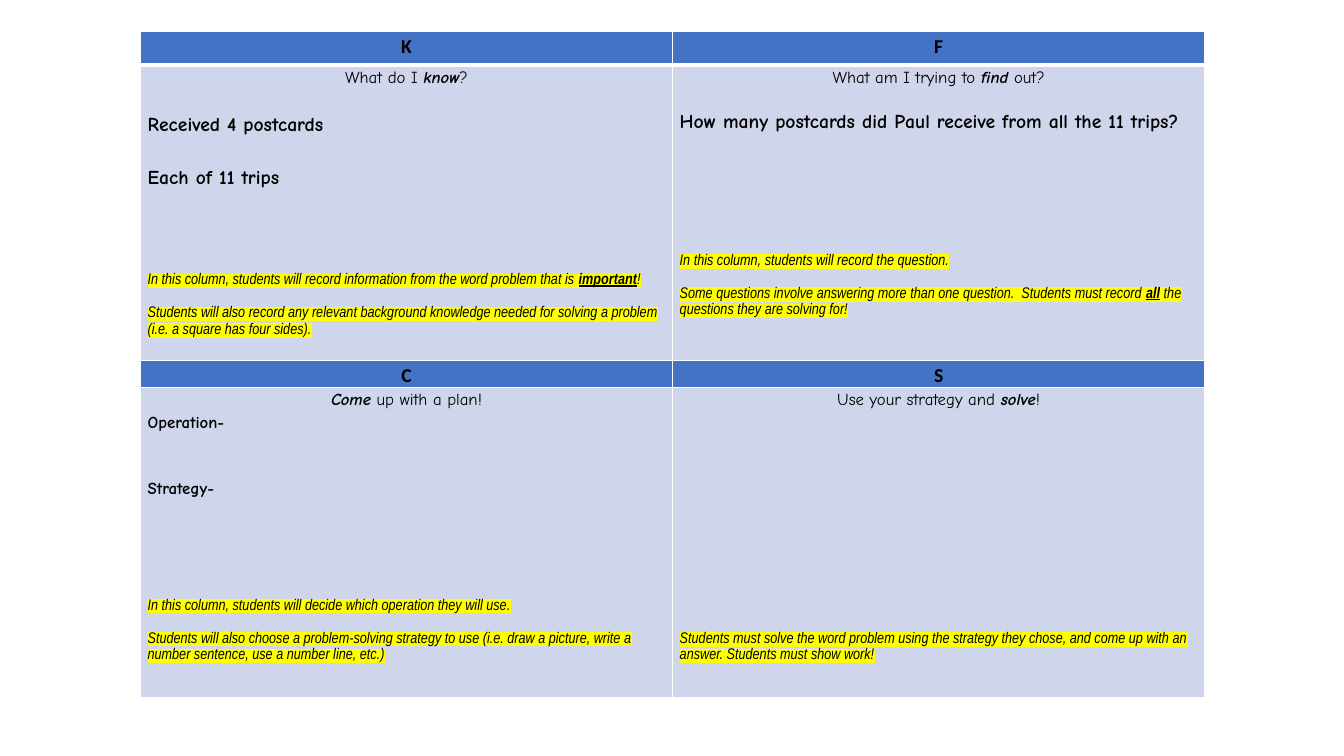
from lxml import etree
from pptx import Presentation
from pptx.dml.color import RGBColor
from pptx.enum.text import PP_ALIGN
from pptx.oxml.ns import qn
from pptx.util import Cm, Pt

CENTER, LEFT = PP_ALIGN.CENTER, PP_ALIGN.LEFT
COLORS = {"header": "4472C4", "body": "CFD5EA", "text": "000000",
          "border": "FFFFFF", "marker": "FFFF00"}

STYLES = {
    "letter": {"font": "Calibri", "size": 14, "bold": True, "align": CENTER},
    "prompt": {"font": "Comic Neue", "size": 12, "align": CENTER},
    "answer": {"font": "Comic Neue", "size": 14, "bold": True},
    "label": {"font": "Comic Neue", "size": 12, "bold": True},
    "note": {"font": "Arial Narrow", "size": 11, "italic": True},
}
NOTE_GAP = 11.8

# Each entry: style, space before in points, line spacing, text with *emphasis*
KNOW = [
    ("prompt", 0, 1.15, "What do I *know*?"),
    ("answer", 19, 1, "Received 4 postcards"),
    ("answer", 21.7, 1, "Each of 11 trips"),
    ("note", 58.5, 1.15, "In this column, students will record information from "
     "the word problem that is *important*!"),
    ("note", NOTE_GAP, 1.15, "Students will also record any relevant background "
     "knowledge needed for solving a problem (i.e. a square has four sides)."),
]
FIND = [
    ("prompt", 0, 1.15, "What am I trying to *find* out?"),
    ("answer", 14.5, 1.15, "How many postcards did Paul receive from all the 11 trips?"),
    ("note", 84.5, 1.15, "In this column, students will record the question."),
    ("note", NOTE_GAP, 1.15, "Some questions involve answering more than one question.  "
     "Students must record *all* the questions they are solving for!"),
]
COME = [
    ("prompt", 0, 1.15, "*Come* up with a plan!"),
    ("label", 0, 1.15, "Operation-"),
    ("label", 31.6, 1.15, "Strategy-"),
    ("note", 70, 1.15, "In this column, students will decide which operation they will use."),
    ("note", NOTE_GAP, 1.15, "Students will also choose a problem-solving strategy to use "
     "(i.e. draw a picture, write a number sentence, use a number line, etc.)"),
]
SOLVE = [
    ("prompt", 0, 1.15, "Use your strategy and *solve*!"),
    ("note", 157, 1.15, "Students must solve the word problem using the strategy they "
     "chose, and come up with an answer. Students must show work!"),
]


def letter(text):
    return [("letter", 0, 1.15, text)]


GRID = [[letter("K"), letter("F")], [KNOW, FIND], [letter("C"), letter("S")], [COME, SOLVE]]
ROW_HEIGHTS = [0.84, 7.44, 0.69, 7.8]


def add_color(parent, tag, color):
    holder = etree.SubElement(parent, qn(tag))
    etree.SubElement(holder, qn("a:srgbClr"), val=COLORS[color])
    return holder


def highlight(run):
    properties = run._r.get_or_add_rPr()
    add_color(properties, "a:highlight", "marker")


def set_borders(cell, widths):
    properties = cell._tc.get_or_add_tcPr()
    for position, (side, width) in enumerate(widths.items()):
        line = etree.Element(qn(f"a:ln{side}"), w=str(Pt(width)))
        add_color(line, "a:solidFill", "border")
        properties.insert(position, line)


def write_paragraph(paragraph, style_name, gap, spacing, text):
    style = STYLES[style_name]
    is_note = style_name == "note"
    paragraph.alignment = style.get("align", LEFT)
    paragraph.line_spacing = spacing
    if gap:
        paragraph.space_before = Pt(gap)
    paragraph.font.name = style["font"]
    paragraph.font.size = Pt(style["size"])
    paragraph.font.bold = style.get("bold", False)
    paragraph.font.italic = style.get("italic", False)
    paragraph.font.color.rgb = RGBColor.from_string(COLORS["text"])
    for index, piece in enumerate(text.split("*")):
        if not piece:
            continue
        run = paragraph.add_run()
        run.text = piece
        if index % 2:
            run.font.bold = True
            if is_note:
                run.font.underline = True
            else:
                run.font.italic = True
        if is_note:
            highlight(run)


def fill_cell(cell, entries, color):
    cell.margin_left = cell.margin_right = Cm(0.18)
    cell.margin_top = cell.margin_bottom = 0
    cell.fill.solid()
    cell.fill.fore_color.rgb = RGBColor.from_string(COLORS[color])
    frame = cell.text_frame
    for index, entry in enumerate(entries):
        paragraph = frame.add_paragraph() if index else frame.paragraphs[0]
        write_paragraph(paragraph, *entry)


def add_kfcs_table(slide, left, top, width):
    height = Cm(sum(ROW_HEIGHTS))
    table = slide.shapes.add_table(len(GRID), 2, left, top, width, height).table
    table.first_row = table.horz_banding = False
    for column in table.columns:
        column.width = width // 2
    for row_index, entries_row in enumerate(GRID):
        table.rows[row_index].height = Cm(ROW_HEIGHTS[row_index])
        color = "body" if row_index % 2 else "header"
        borders = {"L": 1, "R": 1, "T": 3 if row_index == 1 else 1,
                   "B": 3 if row_index == 0 else 1}
        for column_index, entries in enumerate(entries_row):
            cell = table.cell(row_index, column_index)
            fill_cell(cell, entries, color)
            set_borders(cell, borders)


def main():
    presentation = Presentation()
    presentation.slide_width = Cm(33.87)
    presentation.slide_height = Cm(19.05)
    slide = presentation.slides.add_slide(presentation.slide_layouts[6])
    add_kfcs_table(slide, Cm(3.54), Cm(0.8), Cm(26.82))
    presentation.save("out.pptx")


if __name__ == "__main__":
    main()
